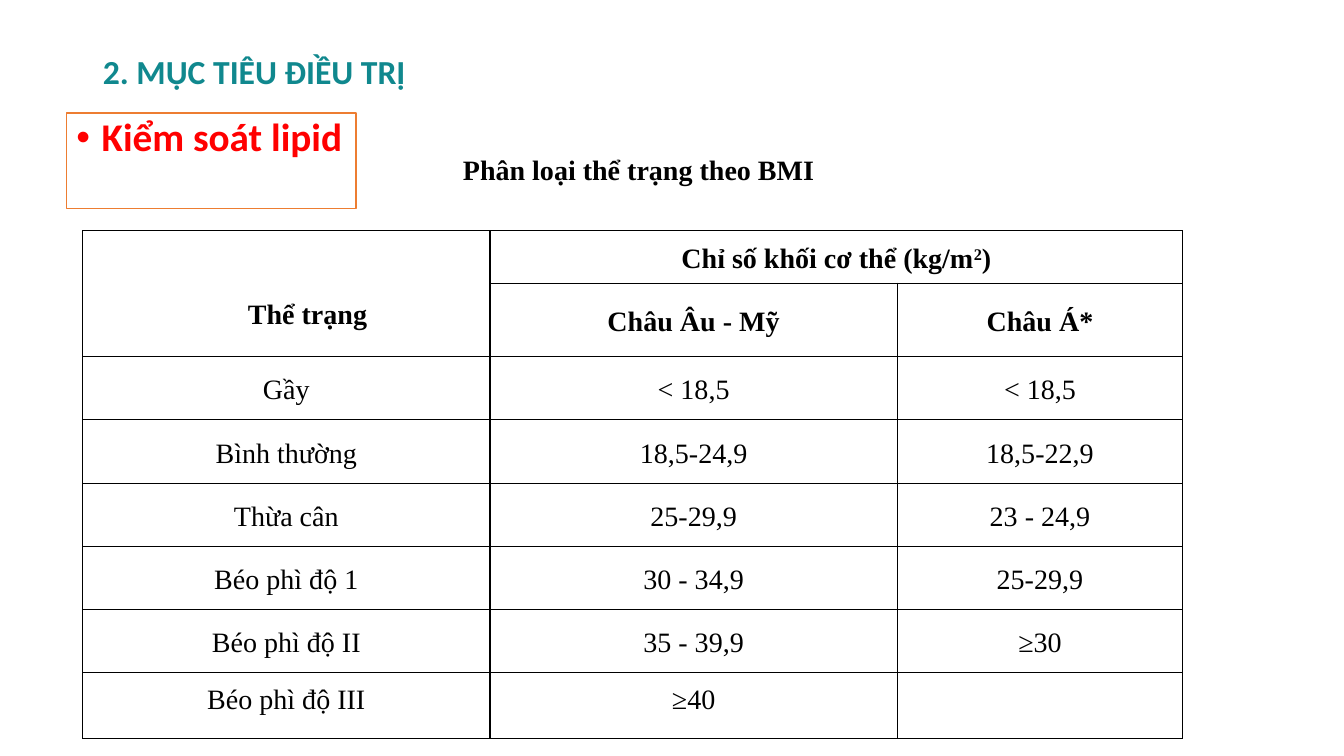
from pptx import Presentation
from pptx.dml.color import RGBColor
from pptx.enum.text import MSO_ANCHOR, MSO_AUTO_SIZE, PP_ALIGN
from pptx.oxml import parse_xml
from pptx.oxml.ns import nsdecls
from pptx.util import Inches, Pt

CENTER, JUSTIFY = PP_ALIGN.CENTER, PP_ALIGN.JUSTIFY
TOP, MIDDLE = MSO_ANCHOR.TOP, MSO_ANCHOR.MIDDLE
NO_FIT = MSO_AUTO_SIZE.NONE

HEADING = "2. MỤC TIÊU ĐIỀU TRỊ"
TOPIC = "Kiểm soát lipid"
CAPTION = "Phân loại thể trạng theo BMI"
BODY_STATE = "Thể trạng"
INDEX_PARTS = ["Chỉ số khối cơ thể (kg/m", "2", ")"]
REGIONS = ["Châu Âu - Mỹ", "Châu Á*"]
CLASSES = [
    ("Gầy", "< 18,5", "< 18,5"),
    ("Bình thường", "18,5-24,9", "18,5-22,9"),
    ("Thừa cân", "25-29,9", "23 - 24,9"),
    ("Béo phì độ 1", "30 - 34,9", "25-29,9"),
    ("Béo phì độ II", "35 - 39,9", "≥30"),
    ("Béo phì độ III", "≥40", ""),
]

COLORS = {"heading": "10888E", "topic": "FF0000", "frame": "ED7D31",
          "ink": "000000", "paper": "FFFFFF"}
SANS, SERIF = "Calibri", "Times New Roman"
COLUMNS = [4.04, 4.04, 2.83]
ROWS = [0.52, 0.72, 0.63, 0.63, 0.63, 0.62, 0.63, 0.65]
SIDE_INDENTS = [0, 0.42, 0.54]


def color(key):
    return RGBColor.from_string(COLORS[key])


def add_run(paragraph, text, size, font, key, bold=True):
    run = paragraph.add_run()
    run.text = text
    run.font.size = Pt(size)
    run.font.name = font
    run.font.bold = bold
    run.font.color.rgb = color(key)
    return run


def add_box(slide, left, top, width, height, anchor):
    box = slide.shapes.add_textbox(*map(Inches, (left, top, width, height)))
    box.text_frame.word_wrap = False
    box.text_frame.auto_size = NO_FIT
    box.text_frame.vertical_anchor = anchor
    return box


def indent(paragraph, left, right=0):
    properties = paragraph._p.get_or_add_pPr()
    properties.set("marL", str(Inches(left)))
    properties.set("marR", str(Inches(right)))


def prepare(cell):
    cell.fill.background()
    cell.vertical_anchor = MIDDLE
    cell.margin_left = cell.margin_right = 0
    cell.margin_top = cell.margin_bottom = 0
    properties = cell._tc.get_or_add_tcPr()
    for position, side in enumerate(("lnL", "lnR", "lnT", "lnB")):
        properties.insert(position, parse_xml(
            f'<a:{side} {nsdecls("a")} w="{Pt(1)}"><a:solidFill>'
            f'<a:srgbClr val="{COLORS["ink"]}"/></a:solidFill></a:{side}>'))


def write(cell, text, bold, spacing=1.15, side=0):
    paragraph = cell.text_frame.paragraphs[0]
    paragraph.alignment = CENTER
    paragraph.line_spacing = spacing
    indent(paragraph, side, side)
    if text:
        add_run(paragraph, text, 20, SERIF, "ink", bold)
    else:
        paragraph.font.size = Pt(20)
    return paragraph


def add_classification(slide):
    table = slide.shapes.add_table(
        len(ROWS), len(COLUMNS), Inches(0.82), Inches(2.29),
        Inches(sum(COLUMNS)), Inches(sum(ROWS))).table
    table.first_row = table.horz_banding = False
    for column, width in zip(table.columns, COLUMNS):
        column.width = Inches(width)
    for row, height in zip(table.rows, ROWS):
        row.height = Inches(height)
    for cell in table.iter_cells():
        prepare(cell)

    state = table.cell(0, 0)
    state.merge(table.cell(1, 0))
    state.margin_top = Inches(0.37)
    indent(write(state, BODY_STATE, True), 0.42)

    index = table.cell(0, 1)
    index.merge(table.cell(0, 2))
    base, power, closing = INDEX_PARTS
    label = write(index, base, True)
    raised = add_run(label, power, 20, SERIF, "ink")
    raised.font._element.set("baseline", "30000")
    add_run(label, closing, 20, SERIF, "ink")

    for c, region in enumerate(REGIONS, 1):
        write(table.cell(1, c), region, True, side=SIDE_INDENTS[c])
    for r, values in enumerate(CLASSES, 2):
        spacing = Pt(14.1) if r == len(ROWS) - 1 else 1.15
        for c, value in enumerate(values):
            write(table.cell(r, c), value, False, spacing, SIDE_INDENTS[c])


def main():
    deck = Presentation()
    deck.slide_width, deck.slide_height = Inches(13.33), Inches(7.5)
    slide = deck.slides.add_slide(deck.slide_layouts[5])

    title = slide.shapes.title
    title.left, title.top = Inches(0.92), Inches(0.4)
    title.width, title.height = Inches(11.5), Inches(0.4)
    title.text_frame.auto_size = NO_FIT
    title.text_frame.vertical_anchor = MIDDLE
    heading = title.text_frame.paragraphs[0]
    heading.alignment = JUSTIFY
    heading.line_spacing = 1.5
    add_run(heading, HEADING, 24, SANS, "heading")

    topic_box = add_box(slide, 0.66, 1.12, 2.87, 0.95, TOP)
    topic_box.fill.solid()
    topic_box.fill.fore_color.rgb = color("paper")
    topic_box.line.color.rgb = color("frame")
    topic_box.line.width = Pt(1)
    topic = topic_box.text_frame.paragraphs[0]
    indent(topic, 0.25)
    bullet = topic._p.get_or_add_pPr()
    bullet.set("indent", str(Inches(-0.25)))
    bullet.append(parse_xml(f'<a:buFont {nsdecls("a")} typeface="Arial"/>'))
    bullet.append(parse_xml(f'<a:buChar {nsdecls("a")} char="•"/>'))
    topic.line_spacing = 0.9
    add_run(topic, TOPIC, 28, SANS, "topic")

    add_classification(slide)

    caption = add_box(slide, 4.48, 1.46, 3.71, 0.44, MIDDLE).text_frame.paragraphs[0]
    caption.alignment = CENTER
    add_run(caption, CAPTION, 20, SERIF, "ink")

    deck.save("out.pptx")


if __name__ == "__main__":
    main()
